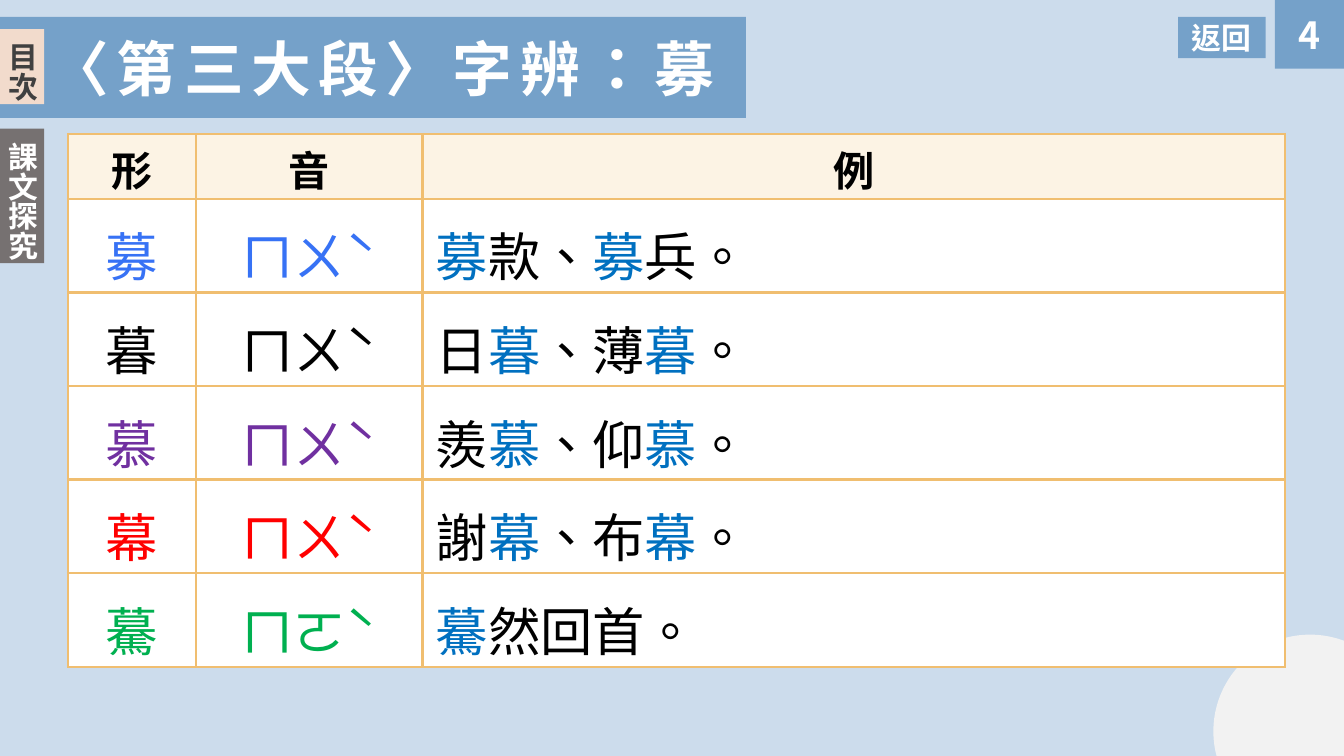
import itertools

import lxml.etree
import pptx
import pptx.dml.color
import pptx.enum.shapes
import pptx.enum.text
import pptx.oxml.ns
import pptx.util

Pt = pptx.util.Pt
RGBColor = pptx.dml.color.RGBColor
PP_ALIGN = pptx.enum.text.PP_ALIGN
MSO_ANCHOR = pptx.enum.text.MSO_ANCHOR
MSO_SHAPE = pptx.enum.shapes.MSO_SHAPE
qn = pptx.oxml.ns.qn

FONT = "Noto Sans CJK SC"
PALE_BLUE = RGBColor(0xCC, 0xDC, 0xEC)
STEEL_BLUE = RGBColor(0x75, 0xA1, 0xC9)
GREY = RGBColor(0x76, 0x71, 0x71)
DARK_GREY = RGBColor(0x40, 0x40, 0x40)
LIGHT_GREY = RGBColor(0xF2, 0xF2, 0xF2)
PEACH = RGBColor(0xF2, 0xDB, 0xCC)
CREAM = RGBColor(0xFC, 0xF3, 0xE4)
GOLD = RGBColor(0xF0, 0xBE, 0x70)
WHITE = RGBColor(0xFF, 0xFF, 0xFF)
BLACK = RGBColor(0, 0, 0)
BLUE = RGBColor(0x37, 0x72, 0xF5)
KEY_BLUE = RGBColor(0, 0x70, 0xC0)
PURPLE = RGBColor(0x70, 0x30, 0xA0)
RED = RGBColor(0xFF, 0, 0)
GREEN = RGBColor(0, 0xB0, 0x50)

HEADINGS = ["形", "音", "例"]
ENTRIES = [
    ("募", "ㄇㄨˋ", "募款、募兵。", BLUE),
    ("暮", "ㄇㄨˋ", "日暮、薄暮。", BLACK),
    ("慕", "ㄇㄨˋ", "羨慕、仰慕。", PURPLE),
    ("幕", "ㄇㄨˋ", "謝幕、布幕。", RED),
    ("驀", "ㄇㄛˋ", "驀然回首。", GREEN),
]
COLUMN_WIDTHS = [68.4, 121.4, 462.2]
HEADER_HEIGHT = 34.6
ENTRY_HEIGHT = 50.16


def apply_format(target, values):
    for attribute, value in values.items():
        setattr(target, attribute, value)


def add_run(paragraph, text, size, color, bold=True):
    run = paragraph.add_run()
    run.text = text
    apply_format(run.font, {"size": Pt(size), "bold": bold, "name": FONT})
    run.font.color.rgb = color
    properties = run._r.get_or_add_rPr()
    properties.set("lang", "zh-TW")
    lxml.etree.SubElement(properties, qn("a:ea")).set("typeface", FONT)
    return properties


def add_block(slide, kind, box, fill):
    block = slide.shapes.add_shape(kind, *map(Pt, box))
    block.shadow.inherit = False
    block.fill.solid()
    block.fill.fore_color.rgb = fill
    block.line.fill.background()
    return block


def add_label(slide, box, fill, text, size=16, color=WHITE, align=PP_ALIGN.LEFT, vertical=False):
    frame = add_block(slide, MSO_SHAPE.RECTANGLE, box, fill).text_frame
    apply_format(frame, {"vertical_anchor": MSO_ANCHOR.MIDDLE, "word_wrap": False})
    if vertical:
        frame._txBody.bodyPr.set("vert", "eaVert")
    paragraph = frame.paragraphs[0]
    paragraph.alignment = align
    add_run(paragraph, text, size, color)


def place_title(slide, text):
    title = slide.shapes.title
    slide.shapes.element.append(title.element)
    apply_format(title, {"left": Pt(19.4), "top": Pt(13), "width": Pt(376), "height": Pt(46)})
    frame = title.text_frame
    apply_format(frame, {
        "vertical_anchor": MSO_ANCHOR.MIDDLE,
        "word_wrap": True,
        "auto_size": pptx.enum.text.MSO_AUTO_SIZE.NONE,
    })
    paragraph = frame.paragraphs[0]
    paragraph.alignment = PP_ALIGN.JUSTIFY
    add_run(paragraph, text, 32, WHITE).set("spc", "400")


def add_borders(cell):
    properties = cell._tc.get_or_add_tcPr()
    for position, side in enumerate(["a:lnL", "a:lnR", "a:lnT", "a:lnB"]):
        line = properties.makeelement(qn(side), {"w": str(Pt(1.5))})
        fill = lxml.etree.SubElement(line, qn("a:solidFill"))
        lxml.etree.SubElement(fill, qn("a:srgbClr")).set("val", str(GOLD))
        properties.insert(position, line)


def format_cell(cell, fill, align, top_margin, spacing):
    cell.fill.solid()
    cell.fill.fore_color.rgb = fill
    apply_format(cell, {
        "vertical_anchor": MSO_ANCHOR.MIDDLE,
        "margin_top": Pt(top_margin),
        "margin_bottom": Pt(0),
    })
    add_borders(cell)
    paragraph = cell.text_frame.paragraphs[0]
    apply_format(paragraph, {"alignment": align, "line_spacing": spacing})
    return paragraph


def add_character_table(slide):
    height = HEADER_HEIGHT + ENTRY_HEIGHT * len(ENTRIES)
    table = slide.shapes.add_table(
        len(ENTRIES) + 1, len(HEADINGS),
        Pt(36.5), Pt(71.9), Pt(sum(COLUMN_WIDTHS)), Pt(height),
    ).table
    apply_format(table, {"first_row": False, "horz_banding": False})
    for column, width in zip(table.columns, COLUMN_WIDTHS):
        column.width = Pt(width)
    for row in table.rows:
        row.height = Pt(ENTRY_HEIGHT)
    table.rows[0].height = Pt(HEADER_HEIGHT)

    for column, heading in enumerate(HEADINGS):
        paragraph = format_cell(table.cell(0, column), CREAM, PP_ALIGN.CENTER, 2.4, None)
        add_run(paragraph, heading, 22, BLACK)
    for row, (character, sound, example, color) in enumerate(ENTRIES, 1):
        for column, text in enumerate([character, sound]):
            paragraph = format_cell(table.cell(row, column), WHITE, PP_ALIGN.CENTER, 1.2, 1.2)
            add_run(paragraph, text, 28, color, False)
        paragraph = format_cell(table.cell(row, 2), WHITE, PP_ALIGN.LEFT, 1.2, 1.2)
        for is_key, letters in itertools.groupby(example, lambda letter: letter == character):
            add_run(paragraph, "".join(letters), 28, KEY_BLUE if is_key else BLACK, False)


def main():
    deck = pptx.Presentation()
    apply_format(deck, {"slide_width": Pt(720), "slide_height": Pt(405)})
    slide = deck.slides.add_slide(deck.slide_layouts[5])
    slide.background.fill.solid()
    slide.background.fill.fore_color.rgb = PALE_BLUE

    add_label(slide, (0, 69, 23.6, 72), GREY, "課文探究", vertical=True)
    add_label(slide, (683, 0, 37, 36.8), STEEL_BLUE, "4", size=20, align=PP_ALIGN.CENTER)
    add_block(slide, MSO_SHAPE.OVAL, (650, 340, 103.6, 103.6), LIGHT_GREY)
    add_block(slide, MSO_SHAPE.RECTANGLE, (0, 9, 399.6, 54.2), STEEL_BLUE)
    place_title(slide, "〈第三大段〉字辨：募")
    add_label(slide, (0, 15.6, 23.6, 40.2), PEACH, "目次", color=DARK_GREY, vertical=True)
    add_character_table(slide)
    add_label(slide, (631.2, 9, 46.8, 22.2), STEEL_BLUE, "返回")
    deck.save("out.pptx")


if __name__ == "__main__":
    main()
